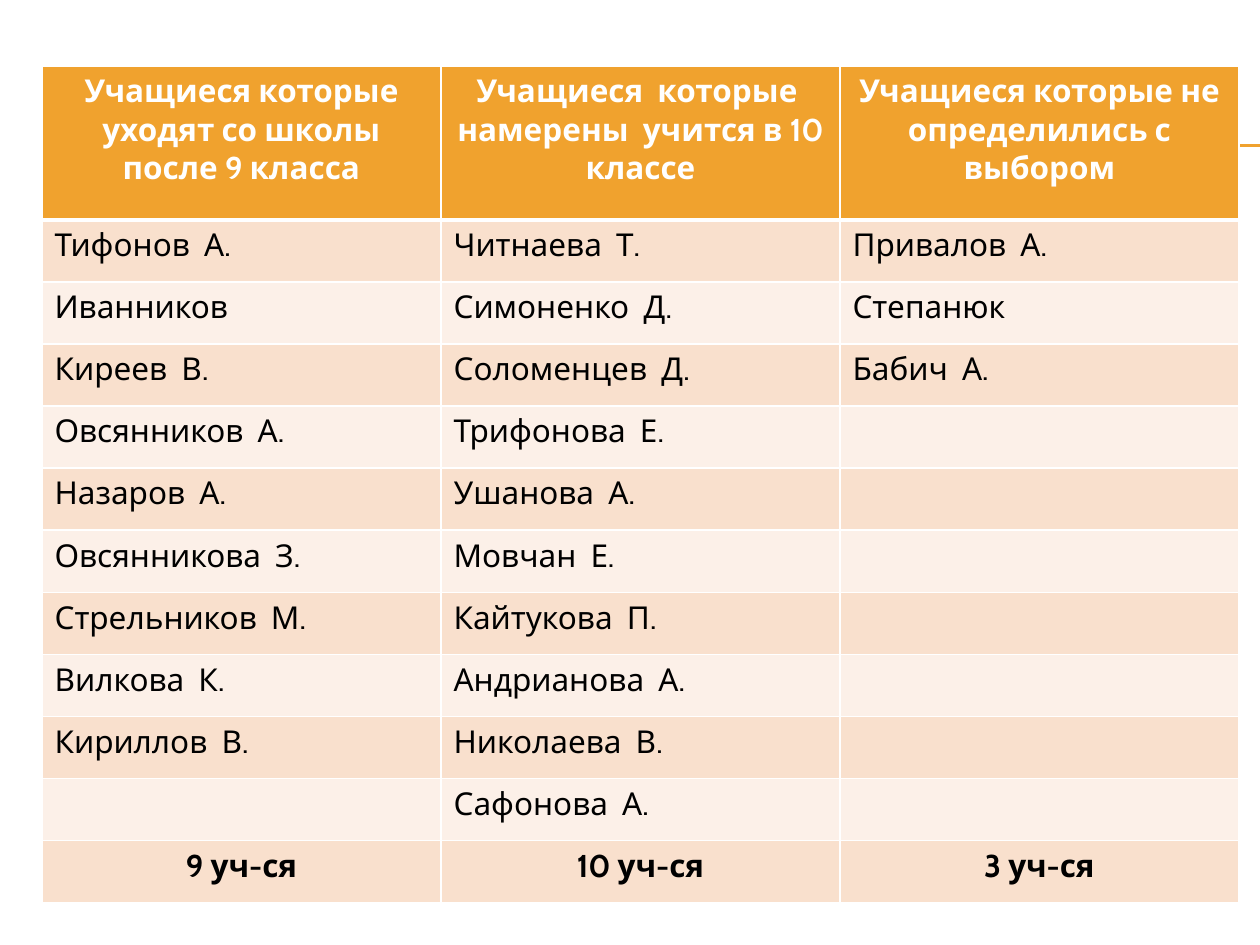
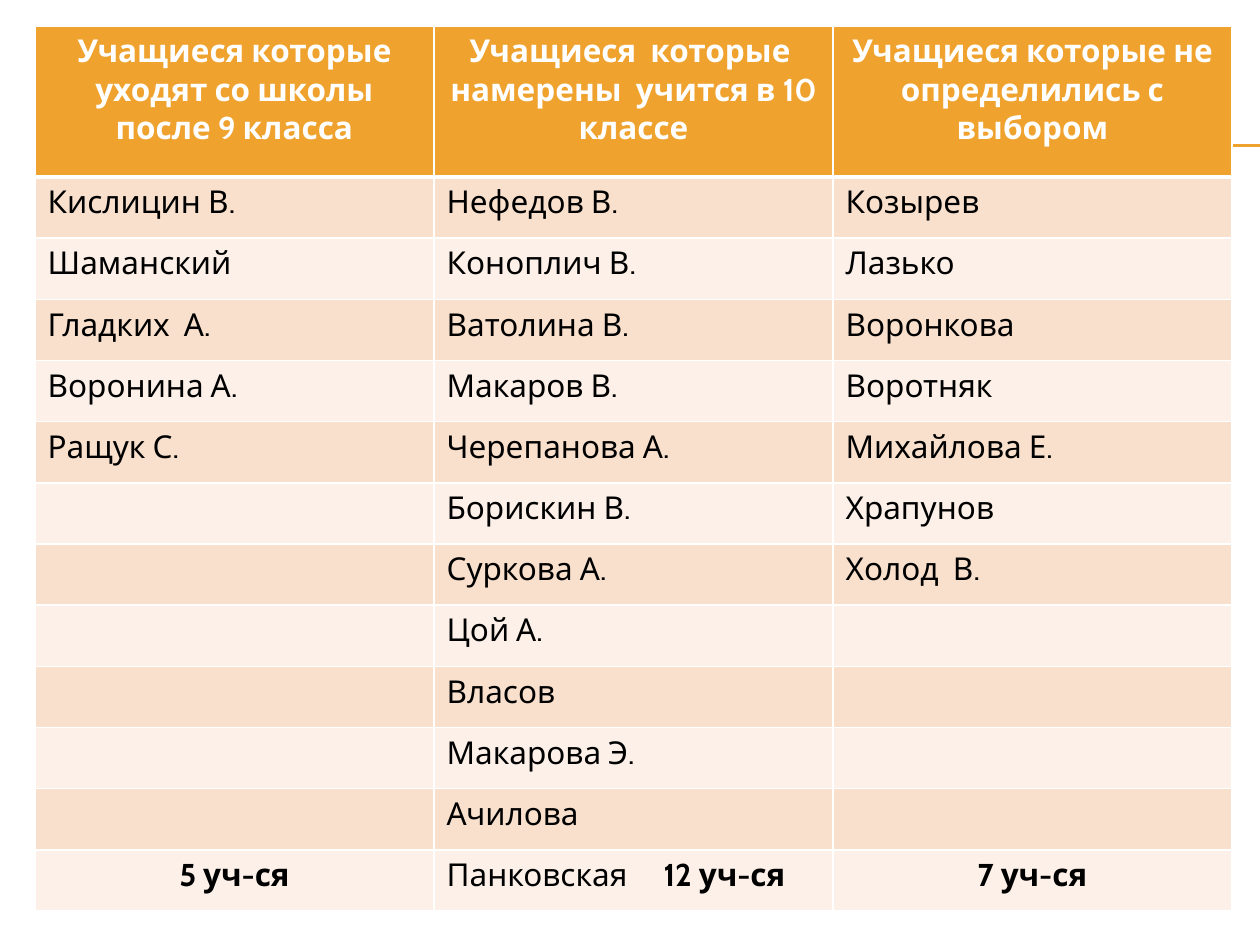
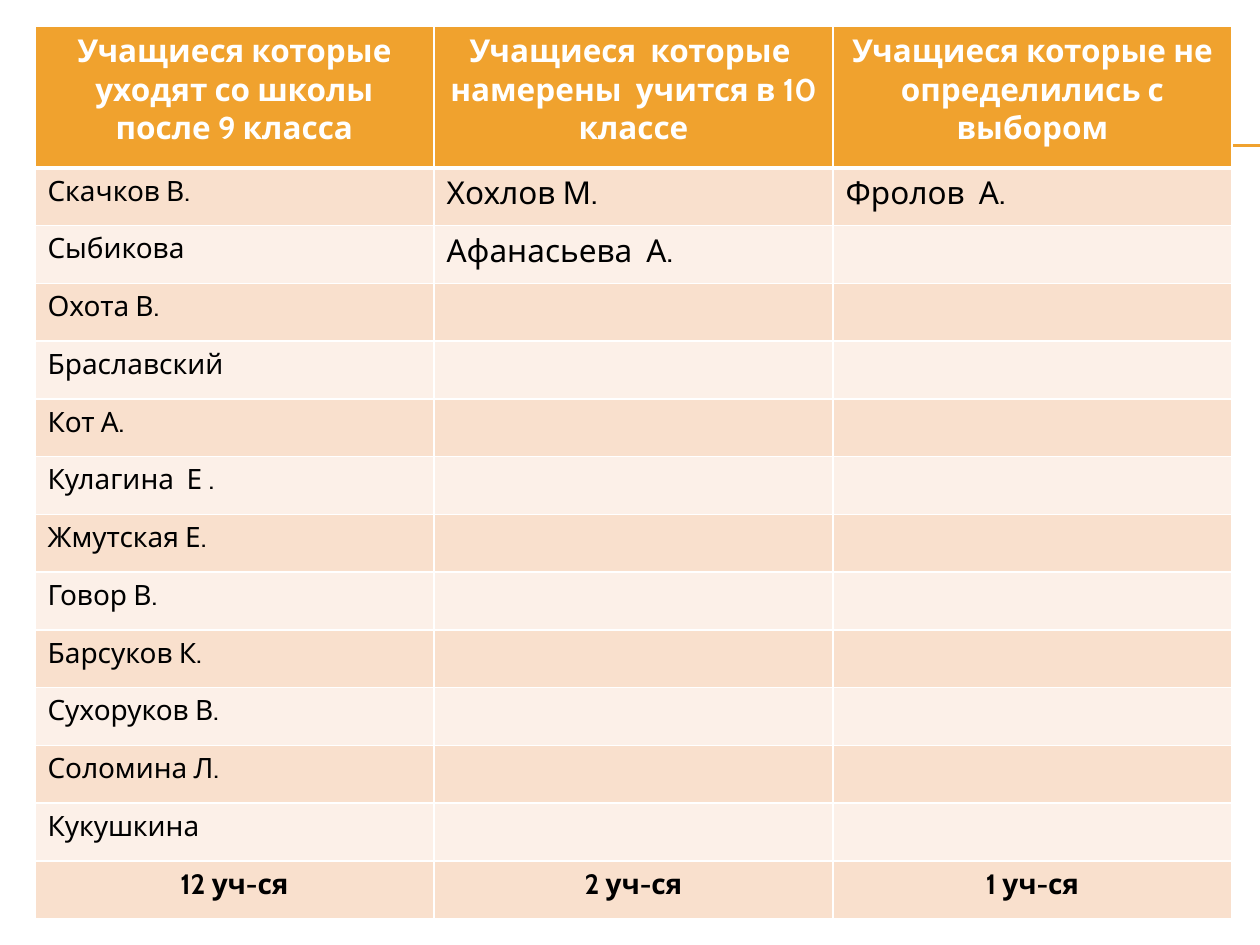
from dataclasses import dataclass

from lxml.etree import SubElement
from pptx import Presentation
from pptx.dml.color import RGBColor
from pptx.enum.shapes import MSO_CONNECTOR as Connector
from pptx.enum.text import PP_ALIGN as Align
from pptx.oxml.ns import qn
from pptx.util import Emu, Pt

PX = 914400 // 126
SLIDE_WIDTH, SLIDE_HEIGHT = 1260, 945

# Shared look
FONT = "Cabin"
ORANGE, WHITE, BLACK = "F0A22E", "FFFFFF", "000000"
BANDS = ["F9E0CD", "FCF0E8"]
COLUMN_WIDTH = 399
TOTAL_TAB = 217
HEADINGS = [
    "Учащиеся которые уходят со школы после 9 класса",
    "Учащиеся  которые  намерены  учится в 10 классе",
    "Учащиеся которые не определились с выбором",
]


@dataclass
class ClassList:
    left: int
    top: int
    height: int
    header_height: int
    body_rows: int
    columns: list
    name_sizes: tuple = (18, 18, 18)
    total_size: int = 18


CLASS_LISTS = [
    ClassList(42, 66, 837, 154, 11, [
        ["Тифонов  А.", "Иванников", "Киреев  В.", "Овсянников  А.", "Назаров  А.",
         "Овсянникова  З.", "Стрельников  М.", "Вилкова  К.", "Кириллов  В."],
        ["Читнаева  Т.", "Симоненко  Д.", "Соломенцев  Д.", "Трифонова  Е.",
         "Ушанова  А.", "Мовчан  Е.", "Кайтукова  П.", "Андрианова  А.",
         "Николаева  В.", "Сафонова  А."],
        ["Привалов  А.", "Степанюк", "Бабич  А."],
    ]),
    ClassList(35, 26, 885, 151, 12, [
        ["Кислицин В.", "Шаманский", "Гладких  А.", "Воронина А.", "Ращук С."],
        ["Нефедов В.", "Коноплич В.", "Ватолина В.", "Макаров В.", "Черепанова А.",
         "Борискин В.", "Суркова А.", "Цой А.", "Власов", "Макарова Э.",
         "Ачилова", "Панковская"],
        ["Козырев", "Лазько", "Воронкова", "Воротняк", "Михайлова Е.",
         "Храпунов", "Холод  В."],
    ]),
    ClassList(35, 26, 893, 142, 13, [
        ["Скачков В.", "Сыбикова", "Охота В.", "Браславский", "Кот А.",
         "Кулагина  Е .", "Жмутская Е.", "Говор В.", "Барсуков К.",
         "Сухоруков В.", "Соломина Л.", "Кукушкина"],
        ["Хохлов М.", "Афанасьева  А."],
        ["Фролов  А."],
    ], name_sizes=(16, 18, 18), total_size=16),
]


def px(length):
    return Emu(length * PX)


def color(value):
    return RGBColor.from_string(value)


def add_rule(slide, y):
    rule = slide.shapes.add_connector(
        Connector.STRAIGHT, px(71), px(y), px(SLIDE_WIDTH), px(y))
    rule.line.color.rgb = color(ORANGE)
    rule.line.width = Pt(0.75)
    SubElement(rule._element.spPr, qn("a:effectLst"))


def add_run(paragraph, text, size=18, bold=False, ink=BLACK):
    run = paragraph.add_run()
    run.text = text
    run.font.name = FONT
    run.font.size = Pt(size)
    run.font.bold = bold
    run.font.color.rgb = color(ink)


def add_tab_stop(paragraph, position):
    tabs = SubElement(paragraph._p.get_or_add_pPr(), qn("a:tabLst"))
    SubElement(tabs, qn("a:tab"), pos=str(px(position)), algn="l")


def paint_cell(cell, fill, top=1, bottom=1):
    properties = cell._tc.get_or_add_tcPr()
    for side, width in (("L", 1), ("R", 1), ("T", top), ("B", bottom)):
        border = SubElement(properties, qn(f"a:ln{side}"), w=str(Pt(width)))
        solid = SubElement(border, qn("a:solidFill"))
        SubElement(solid, qn("a:srgbClr"), val=WHITE)
    cell.fill.solid()
    cell.fill.fore_color.rgb = color(fill)


def fill_column(table, index, class_list):
    names = class_list.columns[index]
    last_row = class_list.body_rows

    # Heading
    heading = table.cell(0, index)
    paint_cell(heading, ORANGE, bottom=3)
    paragraph = heading.text_frame.paragraphs[0]
    paragraph.alignment = Align.CENTER
    add_run(paragraph, HEADINGS[index], bold=True, ink=WHITE)

    # Banded body with names from the top
    for row in range(1, last_row + 1):
        cell = table.cell(row, index)
        paint_cell(cell, BANDS[(row - 1) % 2], top=3 if row == 1 else 1)
        if row <= len(names):
            add_run(cell.text_frame.paragraphs[0], names[row - 1],
                    class_list.name_sizes[index])

    # Total in the last row, beside a name when the column is full
    paragraph = table.cell(last_row, index).text_frame.paragraphs[0]
    total = f"{len(names)} уч-ся"
    if len(names) == last_row:
        add_tab_stop(paragraph, TOTAL_TAB)
        total = "\t" + total
    else:
        paragraph.alignment = Align.CENTER
    add_run(paragraph, total, class_list.total_size, bold=True)


def add_class_table(slide, class_list):
    count = len(HEADINGS)
    frame = slide.shapes.add_table(
        class_list.body_rows + 1, count, px(class_list.left), px(class_list.top),
        px(COLUMN_WIDTH * count), px(class_list.height))
    table = frame.table
    table.horz_banding = False
    body_height = px(class_list.height - class_list.header_height)
    for row in table.rows:
        row.height = Emu(body_height // class_list.body_rows)
    table.rows[0].height = px(class_list.header_height)
    for index in range(count):
        table.columns[index].width = px(COLUMN_WIDTH)
        fill_column(table, index, class_list)


def main():
    presentation = Presentation()
    presentation.slide_width = px(SLIDE_WIDTH)
    presentation.slide_height = px(SLIDE_HEIGHT)
    for class_list in CLASS_LISTS:
        slide = presentation.slides.add_slide(presentation.slide_layouts[6])
        for y in (145, 146):
            add_rule(slide, y)
        add_class_table(slide, class_list)
    presentation.save("out.pptx")


if __name__ == "__main__":
    main()
